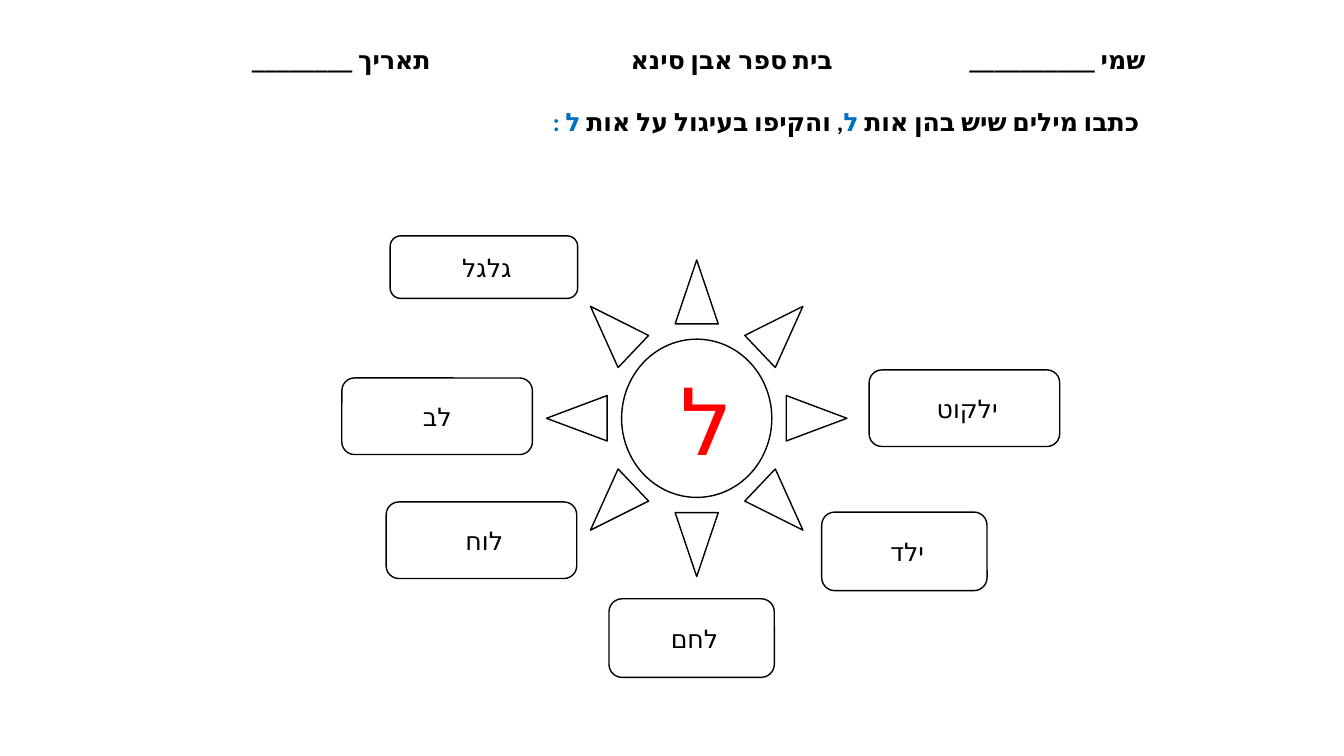
import pptx
import pptx.dml.color
import pptx.enum.lang
import pptx.enum.shapes
import pptx.enum.text
import pptx.oxml
import pptx.oxml.ns
import pptx.util

Inches = pptx.util.Inches
SHAPES = pptx.enum.shapes.MSO_SHAPE
ALIGN = pptx.enum.text.PP_ALIGN
ANCHOR = pptx.enum.text.MSO_ANCHOR

BLACK, WHITE, RED, BLUE = "000000", "FFFFFF", "FF0000", "0070C0"
FONT = "Calibri"
HEADER_TOP, HEADER_HEIGHT = 0.39, 0.4

HEADER_FIELDS = [
    ("שמי __________", 11.46),
    ("בית ספר אבן סינא", 8.36),
    ("תאריך ________", 4.37),
]
INSTRUCTION = [
    ("כתבו מילים שיש בהן אות ", BLACK),
    ("ל", BLUE),
    (", והקיפו בעיגול על אות ", BLACK),
    ("ל :", BLUE),
]
WORD_BOXES = [
    ("ילקוט ", 8.62, 3.67, 1.89, 0.76),
    ("גלגל ", 3.87, 2.34, 1.86, 0.62),
    ("לב", 3.39, 3.75, 1.89, 0.76),
    ("לוח ", 3.83, 4.98, 1.89, 0.76),
    ("לחם ", 6.04, 5.94, 1.64, 0.78),
    ("ילד ", 8.15, 5.08, 1.64, 0.78),
]


def colour(value):
    return pptx.dml.color.RGBColor.from_string(value)


def write(shape, runs, size=18, bold=False, align=ALIGN.CENTER, anchor=ANCHOR.MIDDLE):
    frame = shape.text_frame
    frame.word_wrap = True
    frame.auto_size = pptx.enum.text.MSO_AUTO_SIZE.NONE
    frame.vertical_anchor = anchor
    para = frame.paragraphs[0]
    para.alignment = align
    para._p.get_or_add_pPr().set("rtl", "1")
    for text, run_colour in runs:
        span = para.add_run()
        span.text = text
        span.font.size = pptx.util.Pt(size)
        span.font.bold = bold
        span.font.name = FONT
        span.font.language_id = pptx.enum.lang.MSO_LANGUAGE_ID.HEBREW
        span.font.color.rgb = colour(run_colour)
        complex_font = pptx.oxml.parse_xml(
            f'<a:cs {pptx.oxml.ns.nsdecls("a")} typeface="{FONT}"/>'
        )
        span.font._element.append(complex_font)


def add_outlined(page, kind, left, top, width, height):
    shape = page.shapes.add_shape(
        kind, Inches(left), Inches(top), Inches(width), Inches(height)
    )
    shape.shadow.inherit = False
    shape.fill.solid()
    shape.fill.fore_color.rgb = colour(WHITE)
    shape.line.color.rgb = colour(BLACK)
    shape.line.width = pptx.util.Pt(1)
    return shape


def add_header_field(page, text, right, width=2.6):
    box = page.shapes.add_textbox(
        Inches(right - width), Inches(HEADER_TOP), Inches(width), Inches(HEADER_HEIGHT)
    )
    write(box, [(text, BLACK)], bold=True, align=ALIGN.RIGHT, anchor=ANCHOR.TOP)


def place_instruction(page):
    title = page.shapes.title
    title.left, title.top = Inches(1.9), Inches(1)
    title.width, title.height = Inches(9.5), Inches(HEADER_HEIGHT)
    write(title, INSTRUCTION, bold=True, align=ALIGN.RIGHT, anchor=ANCHOR.TOP)


def main():
    deck = pptx.Presentation()
    deck.slide_width, deck.slide_height = Inches(13.33), Inches(7.5)
    page = deck.slides.add_slide(deck.slide_layouts[5])

    sun = add_outlined(page, SHAPES.SUN, 5.42, 2.58, 2.98, 3.14)
    write(sun, [("ל ", RED)], size=66)
    for word, *place in WORD_BOXES:
        write(add_outlined(page, SHAPES.ROUNDED_RECTANGLE, *place), [(word, BLACK)])

    for text, right in HEADER_FIELDS:
        add_header_field(page, text, right)
    place_instruction(page)
    deck.save("out.pptx")


if __name__ == "__main__":
    main()
